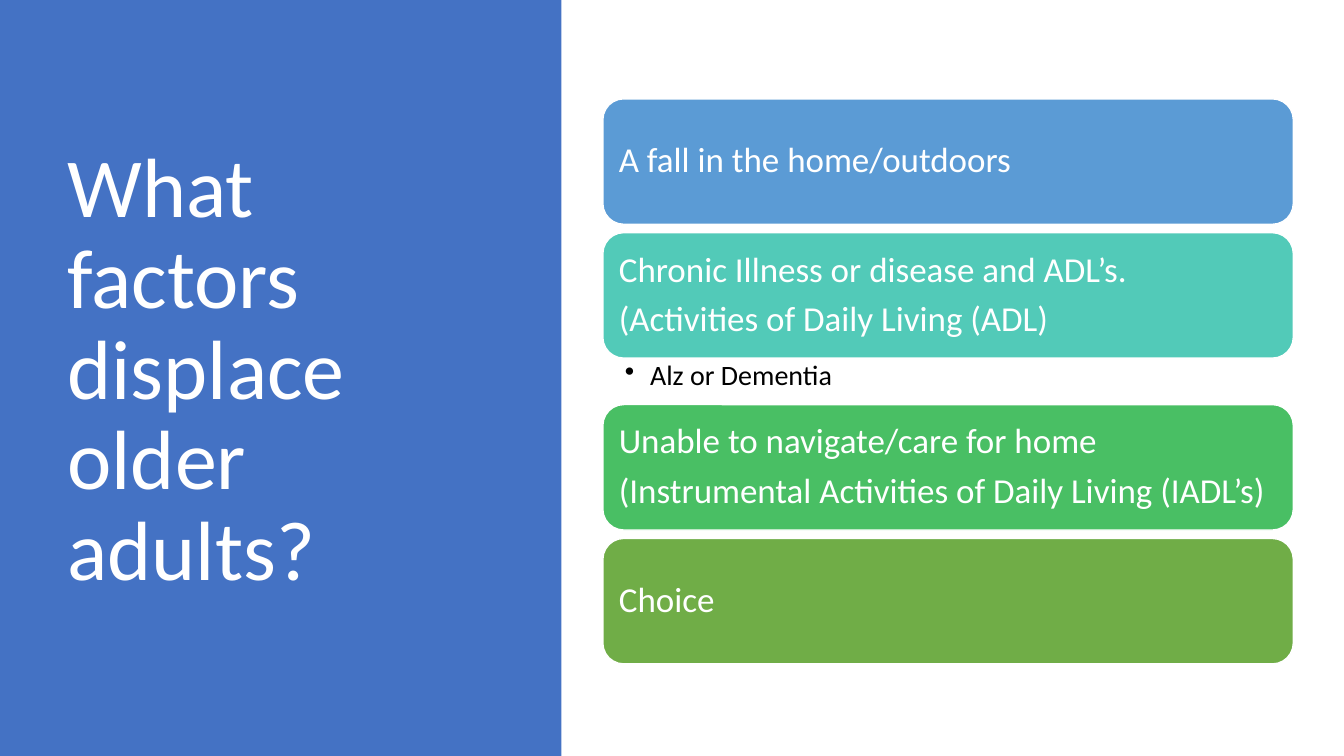
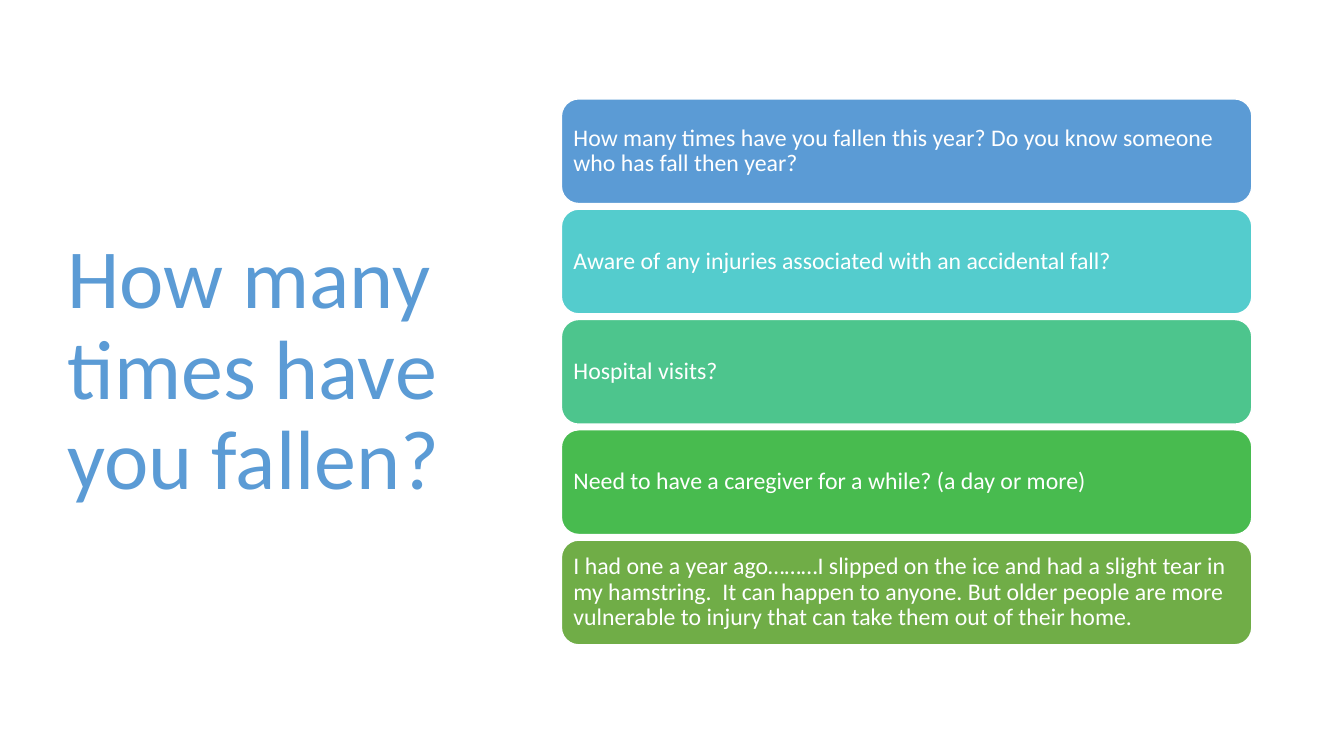
from dataclasses import dataclass

from lxml import etree
from pptx import Presentation
from pptx.dml.color import RGBColor
from pptx.enum.shapes import MSO_SHAPE
from pptx.enum.text import MSO_ANCHOR, MSO_AUTO_SIZE, PP_ALIGN
from pptx.oxml.ns import qn
from pptx.slide import Slide
from pptx.text.text import TextFrame
from pptx.util import Pt

RECT, ROUND = MSO_SHAPE.RECTANGLE, MSO_SHAPE.ROUNDED_RECTANGLE
TOP, MIDDLE = MSO_ANCHOR.TOP, MSO_ANCHOR.MIDDLE
LEFT = PP_ALIGN.LEFT
NO_FIT = MSO_AUTO_SIZE.NONE

FONT = "Calibri"
WIDE, HIGH = 960, 540
BAND = 401
CARD_TOP, CARD_WIDE = 70.6, 493.2
NOTE_HIGH = 33.2
COLORS = {
    "white": "FFFFFF",
    "black": "000000",
    "band": "4472C4",
    "blue": "5B9BD5",
    "aqua": "54CCCD",
    "teal": "52CAB8",
    "mint": "4DC58D",
    "green": "49BF64",
    "leaf": "48BB4F",
    "olive": "70AD47",
}


@dataclass
class Card:
    text: str
    color: str
    note: str = ""


@dataclass
class Stack:
    left: float
    high: float
    gap: float
    size: float
    inset: float
    cards: list[Card]


FACTORS = Stack(430.6, 89.6, 6, 25, 7.2, [
    Card("A fall in the home/outdoors", "blue"),
    Card("Chronic Illness or disease and ADL’s.\n(Activities of Daily Living (ADL)",
         "teal", "Alz or Dementia"),
    Card("Unable to navigate/care for home\n"
         "(Instrumental Activities of Daily Living (IADL’s)", "green"),
    Card("Choice", "olive"),
])

FALLS = Stack(401, 74.8, 4, 17, 5, [
    Card("How many times have you fallen this year? "
         "Do you know someone who has fall then year?", "blue"),
    Card("Aware of any injuries associated with an accidental fall?", "aqua"),
    Card("Hospital visits?", "mint"),
    Card("Need to have a caregiver for a while? (a day or more)", "leaf"),
    Card("I had one a year ago………I slipped on the ice and had a slight tear in "
         "my hamstring.  It can happen to anyone. But older people are more "
         "vulnerable to injury that can take them out of their home.", "olive"),
])


def paint(name: str) -> RGBColor:
    return RGBColor.from_string(COLORS[name])


def write(frame: TextFrame, text: str, size: float, color: str,
          after: float = 0, anchor: MSO_ANCHOR = MIDDLE) -> None:
    frame.text = text
    frame.word_wrap = True
    frame.auto_size = NO_FIT
    frame.vertical_anchor = anchor
    for para in frame.paragraphs:
        para.alignment = LEFT
        para.line_spacing = 0.9
        para.space_before = Pt(0)
        para.space_after = Pt(after)
        for run in para.runs:
            run.font.name = FONT
            run.font.size = Pt(size)
            run.font.color.rgb = paint(color)


def pad(frame: TextFrame, left: float, top: float, right: float, low: float) -> None:
    frame.margin_left, frame.margin_top = Pt(left), Pt(top)
    frame.margin_right, frame.margin_bottom = Pt(right), Pt(low)


def add_title(slide: Slide, text: str, color: str) -> None:
    title = slide.shapes.title
    title.left, title.top = Pt(41), Pt(49)
    title.width, title.height = Pt(299.5), Pt(433.4)
    write(title.text_frame, text, 60, color)


def add_band(slide: Slide) -> None:
    band = slide.shapes.add_shape(RECT, 0, 0, Pt(BAND), Pt(HIGH))
    band.shadow.inherit = False
    band.fill.solid()
    band.fill.fore_color.rgb = paint("band")
    band.line.fill.background()
    slide.shapes.title.element.addprevious(band.element)


def add_card(slide: Slide, stack: Stack, card: Card, top: float) -> None:
    box = slide.shapes.add_shape(
        ROUND, Pt(stack.left), Pt(top), Pt(CARD_WIDE), Pt(stack.high))
    box.shadow.inherit = False
    box.fill.solid()
    box.fill.fore_color.rgb = paint(card.color)
    box.line.color.rgb = paint("white")
    box.line.width = Pt(1)
    pad(box.text_frame, *[stack.inset] * 4)
    write(box.text_frame, card.text, stack.size, "white", stack.size * 0.33)


def add_note(slide: Slide, left: float, top: float, text: str) -> None:
    box = slide.shapes.add_textbox(Pt(left), Pt(top), Pt(CARD_WIDE), Pt(NOTE_HIGH))
    pad(box.text_frame, 15.7, 2, 13.7, 2)
    write(box.text_frame, text, 20, "black", 4, TOP)
    for para in box.text_frame.paragraphs:
        props = para._p.get_or_add_pPr()
        props.set("marL", str(Pt(18)))
        props.set("indent", str(-Pt(18)))
        etree.SubElement(props, qn("a:buChar")).set("char", "•")


def add_stack(slide: Slide, stack: Stack) -> None:
    top = CARD_TOP
    for card in stack.cards:
        add_card(slide, stack, card, top)
        top += stack.high
        if card.note:
            add_note(slide, stack.left, top, card.note)
            top += NOTE_HIGH
        else:
            top += stack.gap


def main() -> None:
    deck = Presentation()
    deck.slide_width, deck.slide_height = Pt(WIDE), Pt(HIGH)
    layout = deck.slide_layouts.get_by_name("Title Only")

    slide = deck.slides.add_slide(layout)
    add_band(slide)
    add_title(slide, "What factors displace older adults?", "white")
    add_stack(slide, FACTORS)

    slide = deck.slides.add_slide(layout)
    add_title(slide, "How many times have you fallen?", "blue")
    add_stack(slide, FALLS)

    deck.save("out.pptx")


if __name__ == "__main__":
    main()
